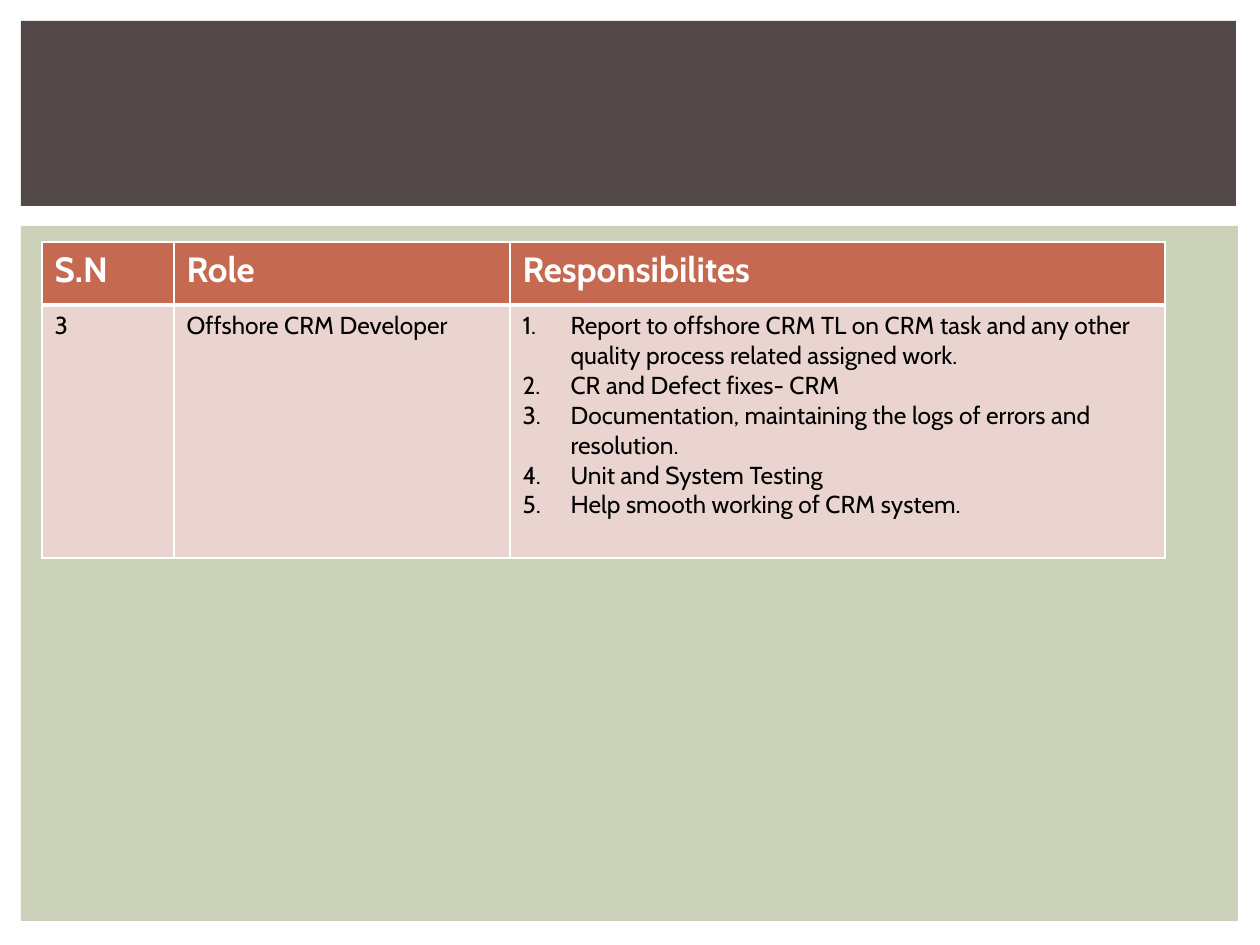
from lxml.etree import SubElement
from pptx import Presentation
from pptx.dml.color import RGBColor
from pptx.enum.shapes import MSO_SHAPE
from pptx.oxml.ns import qn
from pptx.util import Pt

PANELS = [  # left, top, width, height, colour
    (21, 226, 1217, 695, "CCD1B9"),
    (21, 21, 1215, 185, "534949"),
]
HEADER = ["S.N", "Role", "Responsibilites"]
RESPONSIBILITIES = [
    "Report to offshore CRM TL on CRM task and any other quality process related assigned work.",
    "CR and Defect fixes- CRM",
    "Documentation, maintaining the logs of errors and resolution.",
    "Unit and System Testing",
    "Help smooth working of CRM system.",
]
BODY = ["3", "Offshore CRM Developer", RESPONSIBILITIES]
TABLE_LEFT, TABLE_TOP = 42, 242
COL_WIDTHS = [132, 336, 655]
ROW_HEIGHTS = [63, 253]
ROW_STYLES = [  # fill, text colour, size, bold, bottom border in points
    ("C66951", "FFFFFF", 20, True, 3),
    ("EAD4D0", "000000", 14, False, 1),
]
NUMBER_INDENT = 48


def px(n):
    return round(n * 914400 / 126)


def rgb(value):
    return RGBColor.from_string(value)


def add_borders(cell, widths):
    tcPr = cell._tc.get_or_add_tcPr()
    for side, width in widths.items():
        ln = SubElement(tcPr, qn(f"a:ln{side}"), w=str(Pt(width)))
        fill = SubElement(ln, qn("a:solidFill"))
        SubElement(fill, qn("a:srgbClr"), val="FFFFFF")


def number(p):
    pPr = p._p.get_or_add_pPr()
    pPr.set("marL", str(px(NUMBER_INDENT)))
    pPr.set("indent", str(-px(NUMBER_INDENT)))
    SubElement(pPr, qn("a:buFont"), typeface="+mj-lt")
    SubElement(pPr, qn("a:buAutoNum"), type="arabicPeriod")


def fill_cell(cell, content, style, top_width):
    """Write a string, or a list as numbered paragraphs, and style the cell."""
    fill, color, size, bold, bottom_width = style
    add_borders(cell, {"L": 1, "R": 1, "T": top_width, "B": bottom_width})
    cell.fill.solid()
    cell.fill.fore_color.rgb = rgb(fill)
    numbered = isinstance(content, list)
    tf = cell.text_frame
    for i, text in enumerate(content if numbered else [content]):
        p = tf.add_paragraph() if i else tf.paragraphs[0]
        if numbered:
            number(p)
        r = p.add_run()
        r.text = text
        r.font.name = "Cabin"
        r.font.size = Pt(size)
        r.font.bold = bold
        r.font.color.rgb = rgb(color)


prs = Presentation()
prs.slide_width, prs.slide_height = px(1260), px(945)
s = prs.slides.add_slide(prs.slide_layouts[6])

for *box, color in PANELS:
    sp = s.shapes.add_shape(MSO_SHAPE.RECTANGLE, *map(px, box))
    sp.shadow.inherit = False
    sp.fill.solid()
    sp.fill.fore_color.rgb = rgb(color)
    sp.line.fill.background()

table = s.shapes.add_table(
    len(ROW_HEIGHTS), len(COL_WIDTHS), px(TABLE_LEFT), px(TABLE_TOP),
    px(sum(COL_WIDTHS)), px(sum(ROW_HEIGHTS))).table
for column, width in zip(table.columns, COL_WIDTHS):
    column.width = px(width)
top_width = 1
for row, height, texts, style in zip(table.rows, ROW_HEIGHTS, [HEADER, BODY], ROW_STYLES):
    row.height = px(height)
    for cell, content in zip(row.cells, texts):
        fill_cell(cell, content, style, top_width)
    top_width = style[-1]

prs.save("out.pptx")
